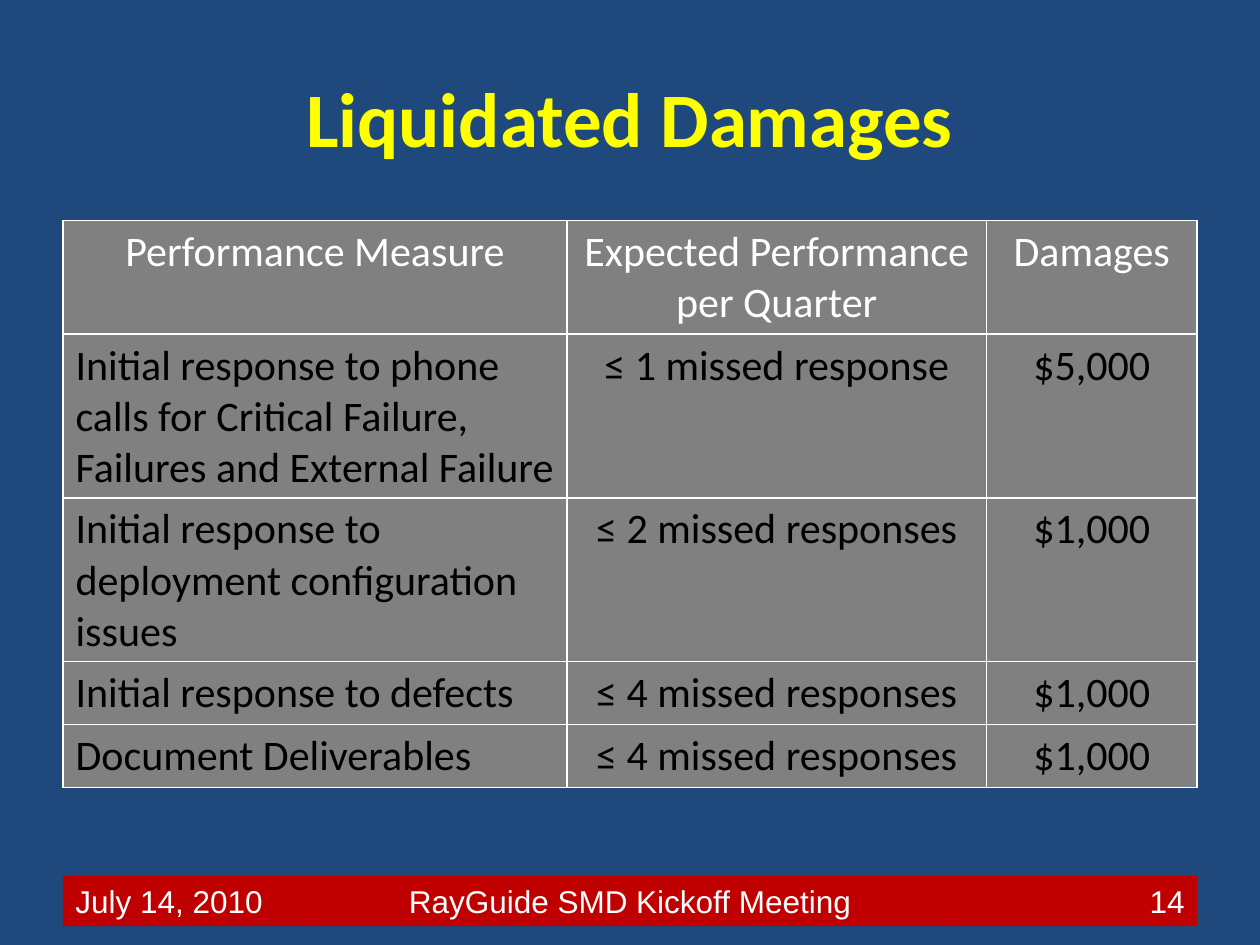
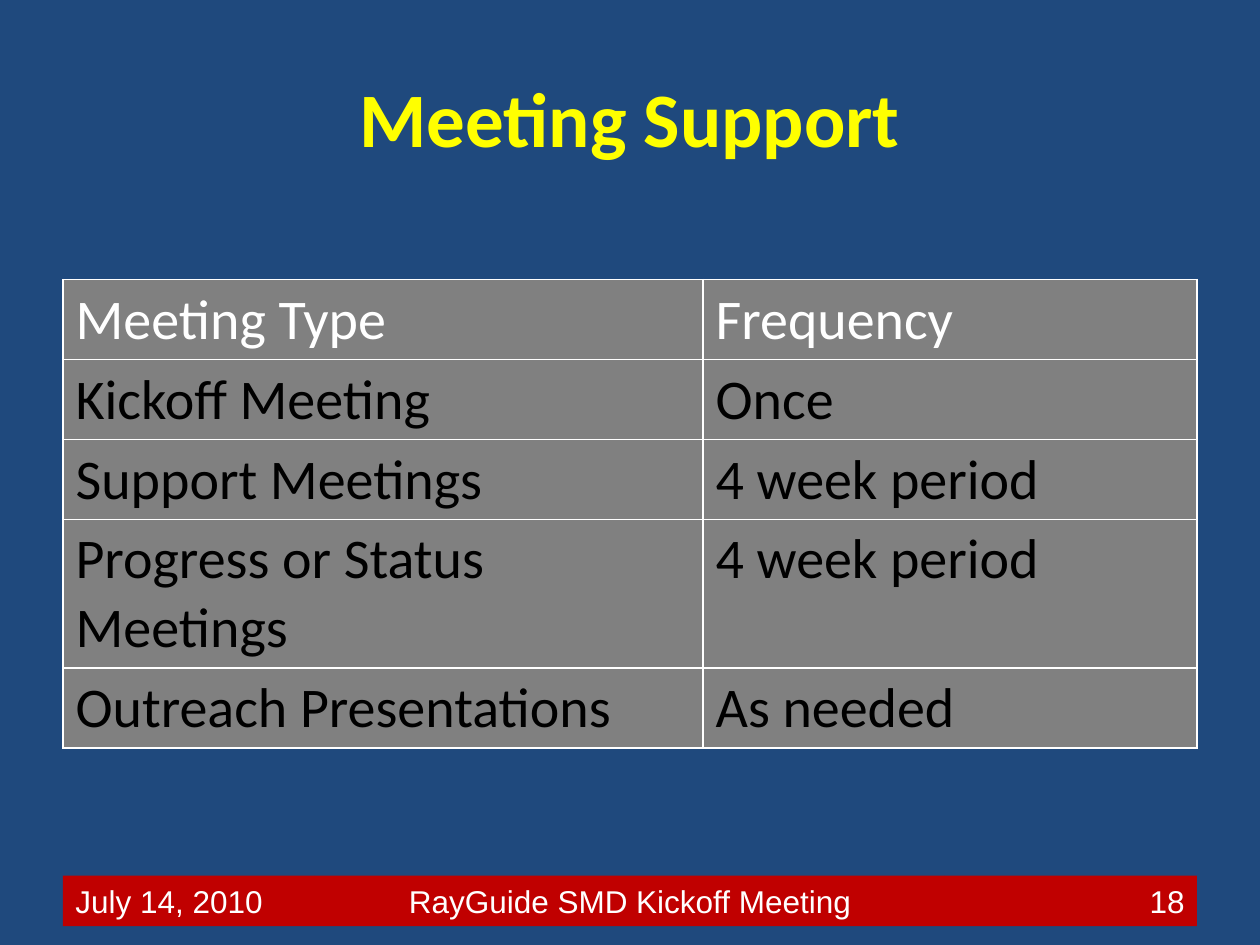
from lxml import etree
from pptx import Presentation
from pptx import util as u
from pptx.dml.color import RGBColor
from pptx.enum import shapes, text
from pptx.oxml import ns

NAVY = RGBColor(0x1F, 0x49, 0x7D)
RED = RGBColor(0xC0, 0x00, 0x00)
YELLOW = RGBColor(0xFF, 0xFF, 0x00)
GRAY = RGBColor(0x80, 0x80, 0x80)
WHITE = RGBColor(0xFF, 0xFF, 0xFF)
BLACK = RGBColor(0x00, 0x00, 0x00)

LEFT, CENTER, RIGHT = text.PP_ALIGN.LEFT, text.PP_ALIGN.CENTER, text.PP_ALIGN.RIGHT
MARGIN = 0.5

TITLE_FONT = {"name": "Calibri", "size": u.Pt(44), "bold": True}
FOOTER_FONT = {"name": "Arial", "size": u.Pt(18), "bold": False}

PAGES = [
    {
        "title": "Liquidated Damages",
        "number": "14",
        "top": 1.75,
        "size": 24,
        "columns": [4, 3.33, 1.67],
        "heights": [0.9, 1.3, 1.3, 0.5, 0.5],
        "header_align": [CENTER, CENTER, CENTER],
        "body_align": [LEFT, CENTER, CENTER],
        "rows": [
            ["Performance Measure", "Expected Performance per Quarter", "Damages"],
            ["Initial response to phone calls for Critical Failure, Failures and External Failure",
             "≤ 1 missed response", "$5,000"],
            ["Initial response to deployment configuration issues",
             "≤ 2 missed responses", "$1,000"],
            ["Initial response to defects", "≤ 4 missed responses", "$1,000"],
            ["Document Deliverables", "≤ 4 missed responses", "$1,000"],
        ],
    },
    {
        "title": "Meeting Support",
        "number": "18",
        "top": 2.22,
        "size": 32,
        "columns": [5.08, 3.92],
        "heights": [0.63, 0.63, 0.63, 1.18, 0.63],
        "header_align": [LEFT, LEFT],
        "body_align": [LEFT, LEFT],
        "rows": [
            ["Meeting Type", "Frequency"],
            ["Kickoff Meeting", "Once"],
            ["Support Meetings", "4 week period"],
            ["Progress or Status Meetings", "4 week period"],
            ["Outreach Presentations", "As needed"],
        ],
    },
]


def write(frame, words, align, color, font_format):
    paragraph = frame.paragraphs[0]
    paragraph.alignment = align
    run = paragraph.add_run()
    run.text = words
    for attribute, value in font_format.items():
        setattr(run.font, attribute, value)
    run.font.color.rgb = color


def draw_borders(cell):
    properties = cell._tc.get_or_add_tcPr()
    for side in ("a:lnL", "a:lnR", "a:lnT", "a:lnB"):
        line = etree.SubElement(properties, ns.qn(side), w=str(u.Pt(1)))
        fill = etree.SubElement(line, ns.qn("a:solidFill"))
        etree.SubElement(fill, ns.qn("a:srgbClr"), val=str(WHITE))


deck = Presentation()
deck.slide_width, deck.slide_height = u.Inches(10), u.Inches(7.5)

for page in PAGES:
    slide = deck.slides.add_slide(deck.slide_layouts[6])
    slide.background.fill.solid()
    slide.background.fill.fore_color.rgb = NAVY

    footer_left = MARGIN
    for words, width, align in [
        ("July 14, 2010", 2, LEFT),
        ("RayGuide SMD Kickoff Meeting", 5, CENTER),
        (page["number"], 2, RIGHT),
    ]:
        band = slide.shapes.add_shape(
            shapes.MSO_SHAPE.RECTANGLE,
            u.Inches(footer_left), u.Inches(6.95), u.Inches(width), u.Inches(0.4))
        band.shadow.inherit = False
        band.fill.solid()
        band.fill.fore_color.rgb = RED
        band.line.fill.background()
        band.text_frame.vertical_anchor = text.MSO_ANCHOR.TOP
        write(band.text_frame, words, align, WHITE, FOOTER_FONT)
        footer_left += width

    title = slide.shapes.add_textbox(
        u.Inches(MARGIN), u.Inches(0.3), u.Inches(9), u.Inches(1.25)).text_frame
    title.word_wrap = True
    title.vertical_anchor = text.MSO_ANCHOR.MIDDLE
    write(title, page["title"], CENTER, YELLOW, TITLE_FONT)

    rows = page["rows"]
    grid = slide.shapes.add_table(
        len(rows), len(page["columns"]), u.Inches(MARGIN), u.Inches(page["top"]),
        u.Inches(9), u.Inches(sum(page["heights"]))).table
    for column, width in zip(grid.columns, page["columns"]):
        column.width = u.Inches(width)
    for row, height in zip(grid.rows, page["heights"]):
        row.height = u.Inches(height)

    cell_font = {"name": "Calibri", "size": u.Pt(page["size"]), "bold": False}
    for row_index, entries in enumerate(rows):
        is_header = row_index == 0
        aligns = page["header_align"] if is_header else page["body_align"]
        for column_index, (entry, align) in enumerate(zip(entries, aligns)):
            cell = grid.cell(row_index, column_index)
            draw_borders(cell)
            cell.fill.solid()
            cell.fill.fore_color.rgb = GRAY
            write(cell.text_frame, entry, align, WHITE if is_header else BLACK, cell_font)

deck.save("out.pptx")
